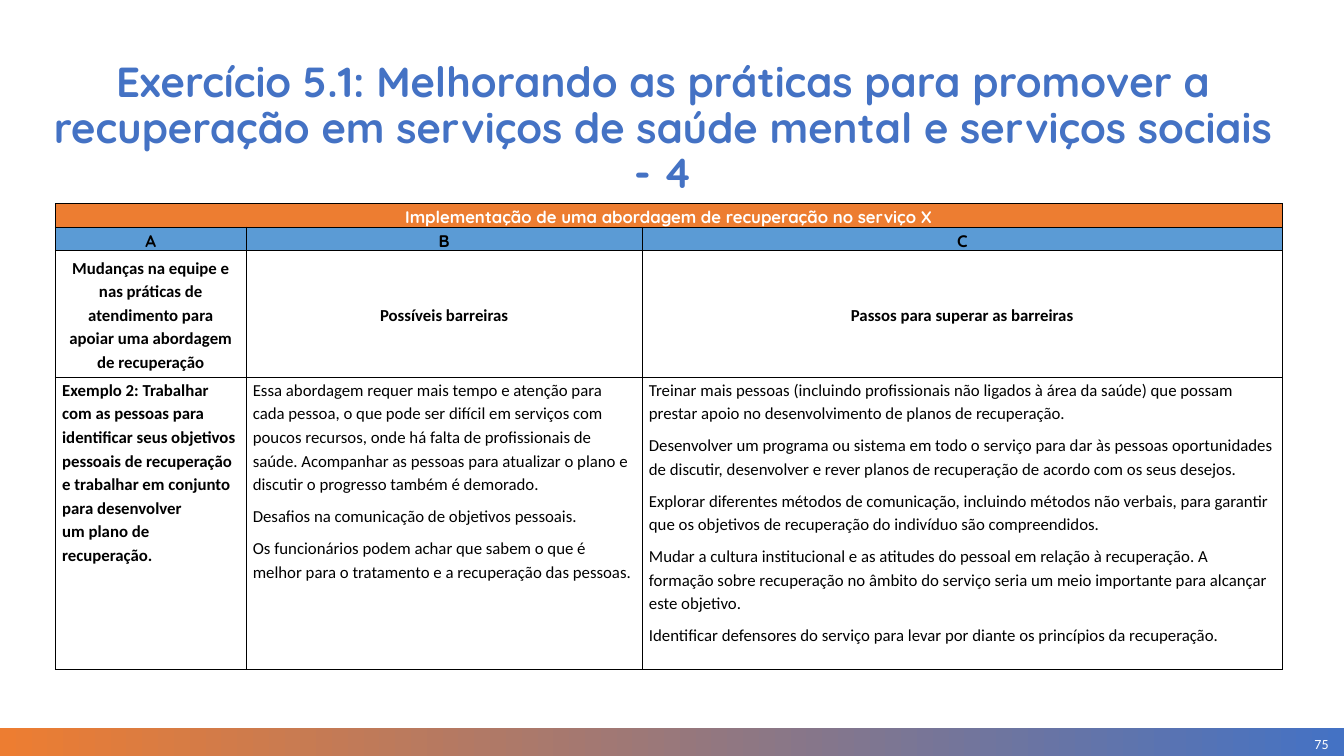
import pptx
import pptx.util
import pptx.dml.color
import pptx.enum.shapes
import pptx.enum.text
import pptx.oxml

Pt = pptx.util.Pt
ALIGN = pptx.enum.text.PP_ALIGN
ANCHOR = pptx.enum.text.MSO_ANCHOR
COLS, ROWS = 160, 90
HUES = {"orange": "ED7D31", "blue": "4472C4", "sky": "5B9BD5",
        "black": "000000", "white": "FFFFFF"}
HEAD, BODY = "Quicksand", "Calibri"

TITLE = ("Exercício 5.1: Melhorando as práticas para promover a recuperação "
         "em serviços de saúde mental e serviços sociais - 4")
BANNER = "Implementação de uma abordagem de recuperação no serviço X"
TOPICS = [
    "Mudanças na equipe e nas práticas de atendimento para apoiar uma "
    "abordagem de recuperação",
    "Possíveis barreiras",
    "Passos para superar as barreiras",
]
CASE = [
    "Exemplo 2: Trabalhar com as pessoas para",
    "identificar seus objetivos pessoais de recuperação",
    "e trabalhar em conjunto para desenvolver",
    "um plano de recuperação.",
]
LIMITS = [
    "Essa abordagem requer mais tempo e atenção para cada pessoa, o que pode "
    "ser difícil em serviços com poucos recursos, onde há falta de "
    "profissionais de saúde. Acompanhar as pessoas para atualizar o plano e "
    "discutir o progresso também é demorado.",
    "Desafios na comunicação de objetivos pessoais.",
    "Os funcionários podem achar que sabem o que é melhor para o tratamento e "
    "a recuperação das pessoas.",
]
STEPS = [
    "Treinar mais pessoas (incluindo profissionais não ligados à área da "
    "saúde) que possam prestar apoio no desenvolvimento de planos de "
    "recuperação.",
    "Desenvolver um programa ou sistema em todo o serviço para dar às pessoas "
    "oportunidades de discutir, desenvolver e rever planos de recuperação de "
    "acordo com os seus desejos.",
    "Explorar diferentes métodos de comunicação, incluindo métodos não "
    "verbais, para garantir que os objetivos de recuperação do indivíduo são "
    "compreendidos.",
    "Mudar a cultura institucional e as atitudes do pessoal em relação à "
    "recuperação. A formação sobre recuperação no âmbito do serviço seria um "
    "meio importante para alcançar este objetivo.",
    "Identificar defensores do serviço para levar por diante os princípios da "
    "recuperação.",
]


def rgb(hue):
    return pptx.dml.color.RGBColor.from_string(HUES[hue])


class Deck:
    """Builds one slide on a grid of COLS by ROWS cells."""

    def __init__(self):
        self.prs = pptx.Presentation()
        self.prs.slide_width = pptx.util.Inches(13.33)
        self.prs.slide_height = pptx.util.Inches(7.5)
        self.slide = self.prs.slides.add_slide(self.prs.slide_layouts[5])
        self.shapes = self.slide.shapes

    def wide(self, cols):
        return round(self.prs.slide_width * cols / COLS)

    def high(self, rows):
        return round(self.prs.slide_height * rows / ROWS)

    def area(self, x, y, w, h):
        return self.wide(x), self.high(y), self.wide(w), self.high(h)

    def text(self, frame, lines, size=12, face=BODY, hue="black", bold=False,
             align=ALIGN.LEFT, lead=1.0, after=0):
        frame.word_wrap = True
        for i, line in enumerate(lines):
            par = frame.add_paragraph() if i else frame.paragraphs[0]
            par.text = line
            par.alignment = align
            par.line_spacing = lead
            par.space_before = Pt(0)
            par.space_after = Pt(after)
            font = par.font
            font.size, font.name, font.bold = Pt(size), face, bold
            font.color.rgb = rgb(hue)

    def title(self, text, *area):
        box = self.shapes.title
        box.left, box.top, box.width, box.height = self.area(*area)
        frame = box.text_frame
        frame.auto_size = pptx.enum.text.MSO_AUTO_SIZE.NONE
        frame.vertical_anchor = ANCHOR.TOP
        self.text(frame, [text], 30, HEAD, "blue", True, ALIGN.CENTER, 0.9)

    def band(self, start, end, *area):
        bar = self.shapes.add_shape(
            pptx.enum.shapes.MSO_SHAPE.RECTANGLE, *self.area(*area))
        bar.shadow.inherit = False
        bar.line.fill.background()
        bar.fill.gradient()
        bar.fill.gradient_angle = 0
        for stop, hue, pos in zip(bar.fill.gradient_stops, (start, end), (0, 1)):
            stop.color.rgb = rgb(hue)
            stop.position = pos

    def label(self, text, *area):
        frame = self.shapes.add_textbox(*self.area(*area)).text_frame
        frame.margin_left = frame.margin_right = 0
        frame.margin_top = frame.margin_bottom = 0
        frame.vertical_anchor = ANCHOR.MIDDLE
        self.text(frame, [text], 10, hue="white", align=ALIGN.RIGHT)

    def table(self, x, y, cols, rows):
        area = self.area(x, y, sum(cols), sum(rows))
        grid = self.shapes.add_table(len(rows), len(cols), *area).table
        grid.first_row = grid.horz_banding = False
        for col, w in zip(grid.columns, cols):
            col.width = self.wide(w)
        for row, h in zip(grid.rows, rows):
            row.height = self.high(h)
        for cell in grid.iter_cells():
            self.frame(cell)
        return grid

    def frame(self, cell):
        """Draws a thin black line on each side of a cell."""
        props = cell._tc.get_or_add_tcPr()
        for side in "LRTB":
            props.append(pptx.oxml.parse_xml(
                f'<a:ln{side} w="{Pt(1)}" xmlns:a="http://schemas.'
                'openxmlformats.org/drawingml/2006/main"><a:solidFill>'
                f'<a:srgbClr val="{HUES["black"]}"/></a:solidFill></a:ln{side}>'))

    def cell(self, cell, lines, fill=None, pad=0.8, anchor=ANCHOR.MIDDLE, **look):
        if fill:
            cell.fill.solid()
            cell.fill.fore_color.rgb = rgb(fill)
        else:
            cell.fill.background()
        cell.margin_left = cell.margin_right = self.wide(pad)
        cell.margin_top = cell.margin_bottom = 0
        cell.vertical_anchor = anchor
        self.text(cell.text_frame, lines, lead=1.15, **look)


def main():
    deck = Deck()
    deck.band("orange", "blue", 0, 86.64, COLS, 3.36)
    deck.label("75", 136.56, 87.12, 21.6, 2.88)
    grid = deck.table(6.6, 24.24, [22.7, 47.16, 76.2], [2.8, 2.8, 15.1, 34.8])

    head = {"bold": True, "align": ALIGN.CENTER}
    grid.cell(0, 0).merge(grid.cell(0, 2))
    deck.cell(grid.cell(0, 0), [BANNER], "orange", face=HEAD, hue="white", **head)
    for i, (mark, topic, text) in enumerate(
            zip("ABC", TOPICS, (CASE, LIMITS, STEPS))):
        deck.cell(grid.cell(1, i), [mark], "sky", face=HEAD, **head)
        deck.cell(grid.cell(2, i), [topic], pad=1.1, **head)
        deck.cell(grid.cell(3, i), text, anchor=ANCHOR.TOP,
                  bold=i == 0, after=6 if i else 0)

    deck.title(TITLE, 5.16, 6.72, 147.6, 5.64)
    deck.prs.save("out.pptx")


if __name__ == "__main__":
    main()
